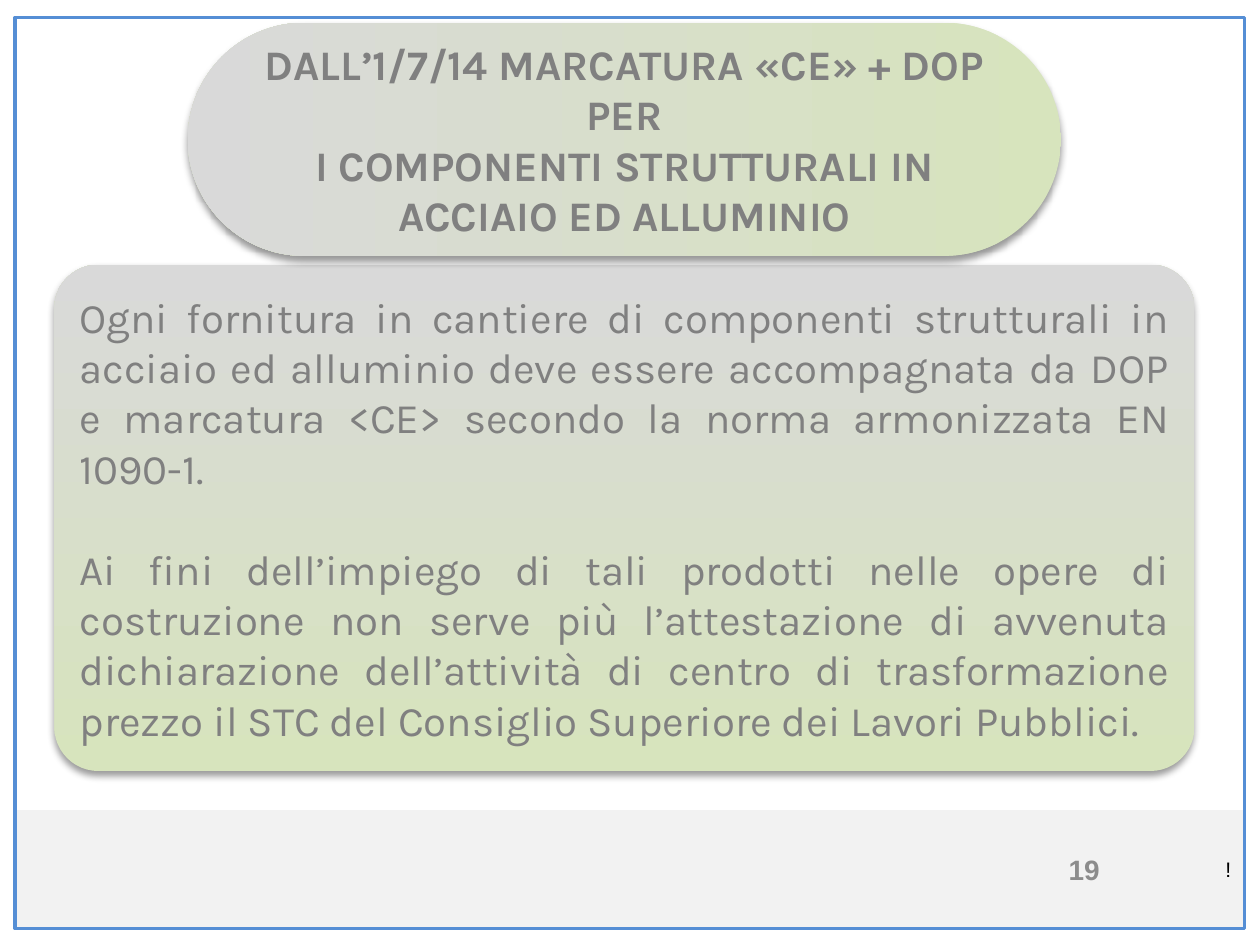
from lxml import etree
from pptx import Presentation
from pptx.dml.color import RGBColor
from pptx.enum.shapes import MSO_SHAPE
from pptx.enum.text import MSO_ANCHOR, PP_ALIGN
from pptx.oxml.ns import qn
from pptx.util import Pt

COLORS = {
    "frame": "558ED5", "footer": "F2F2F2", "green": "D7E4BD", "grey": "D9D9D9",
    "text": "808080", "number": "8C8C8C", "black": "000000",
}
PANEL_TEXT = {"name": "Karla", "size": Pt(24), "color": "text"}
HEADING_TEXT = {**PANEL_TEXT, "bold": True}
NUMBER_TEXT = {"name": "Arial", "size": Pt(16), "color": "number", "bold": True}
MARK_TEXT = {"name": "Arial", "size": Pt(12), "color": "black"}


def rgb(name):
    return RGBColor.from_string(COLORS[name])


def write(shape, paragraphs, text_format, align, gap=0):
    frame = shape.text_frame
    frame.word_wrap = True
    frame.vertical_anchor = MSO_ANCHOR.MIDDLE
    for index, text in enumerate(paragraphs):
        para = frame.add_paragraph() if index else frame.paragraphs[0]
        para.alignment = align
        if index:
            para.space_before = Pt(gap)
        span = para.add_run()
        span.text = text
        for key, value in text_format.items():
            if key == "color":
                span.font.color.rgb = rgb(value)
            else:
                setattr(span.font, key, value)


def add_box(page, kind, box):
    shape = page.shapes.add_shape(kind, *map(Pt, box))
    shape.shadow.inherit = False
    return shape


def add_drop_shadow(shape):
    effects = shape._element.spPr.find(qn("a:effectLst"))
    shadow = etree.SubElement(
        effects, qn("a:outerShdw"), blurRad=str(Pt(4)), dist=str(Pt(3)),
        dir="5400000", rotWithShape="0")
    color = etree.SubElement(shadow, qn("a:srgbClr"), val=COLORS["black"])
    etree.SubElement(color, qn("a:alpha"), val="40000")


def add_panel(page, box, rounding, angle):
    """Rounded panel shaded from green to grey."""
    panel = add_box(page, MSO_SHAPE.ROUNDED_RECTANGLE, box)
    panel.adjustments[0] = rounding
    panel.fill.gradient()
    panel.fill.gradient_angle = angle
    for stop, name in zip(panel.fill.gradient_stops, ("green", "grey")):
        stop.color.rgb = rgb(name)
    panel.line.fill.background()
    add_drop_shadow(panel)
    return panel


def add_frame(page, box, footer_height):
    left, top, width, height = box
    footer_box = (left, top + height - footer_height, width, footer_height)
    footer = add_box(page, MSO_SHAPE.RECTANGLE, footer_box)
    footer.fill.solid()
    footer.fill.fore_color.rgb = rgb("footer")
    footer.line.fill.background()
    border = add_box(page, MSO_SHAPE.RECTANGLE, box)
    border.fill.background()
    border.line.color.rgb = rgb("frame")
    border.line.width = Pt(2)
    return footer_box


def add_footer_text(page, box):
    left, top, width, height = box
    mark = page.shapes.add_textbox(
        Pt(left + width - 266.4), Pt(top + 1.4), Pt(265.7), Pt(height - 2.8))
    write(mark, ["!"], MARK_TEXT, PP_ALIGN.RIGHT)
    number = page.shapes.add_textbox(
        Pt(left + width - 175.7), Pt(top + 19.4), Pt(167.8), Pt(28.8))
    write(number, ["19"], NUMBER_TEXT, PP_ALIGN.CENTER)


def add_body(page, box):
    panel = add_panel(page, box, 0.087, 90)
    write(panel, [
        "Ogni fornitura in cantiere di componenti strutturali in acciaio ed "
        "alluminio deve essere accompagnata da DOP e marcatura <CE> secondo la "
        "norma armonizzata EN 1090-1.",
        "Ai fini dell’impiego di tali prodotti nelle opere di costruzione non "
        "serve più l’attestazione di avvenuta dichiarazione dell’attività di "
        "centro di trasformazione prezzo il STC del Consiglio Superiore dei "
        "Lavori Pubblici.",
    ], PANEL_TEXT, PP_ALIGN.JUSTIFY, gap=28.8)


def add_heading(page, box):
    panel = add_panel(page, box, 0.5, 180)
    write(panel, [
        "DALL’1/7/14 MARCATURA «CE» + DOP PER",
        "I COMPONENTI STRUTTURALI IN ACCIAIO ED ALLUMINIO",
    ], HEADING_TEXT, PP_ALIGN.CENTER)


def main():
    deck = Presentation()
    deck.slide_width, deck.slide_height = Pt(720), Pt(540)
    page = deck.slides.add_slide(deck.slide_layouts[6])
    # Border and footer band
    footer_box = add_frame(page, (8.6, 10.1, 702.7, 520.6), 67.7)
    add_footer_text(page, footer_box)
    # Text panels
    add_body(page, (31, 151.2, 651.6, 289.4))
    add_heading(page, (107.3, 13, 499, 133.2))
    deck.save("out.pptx")


if __name__ == "__main__":
    main()
